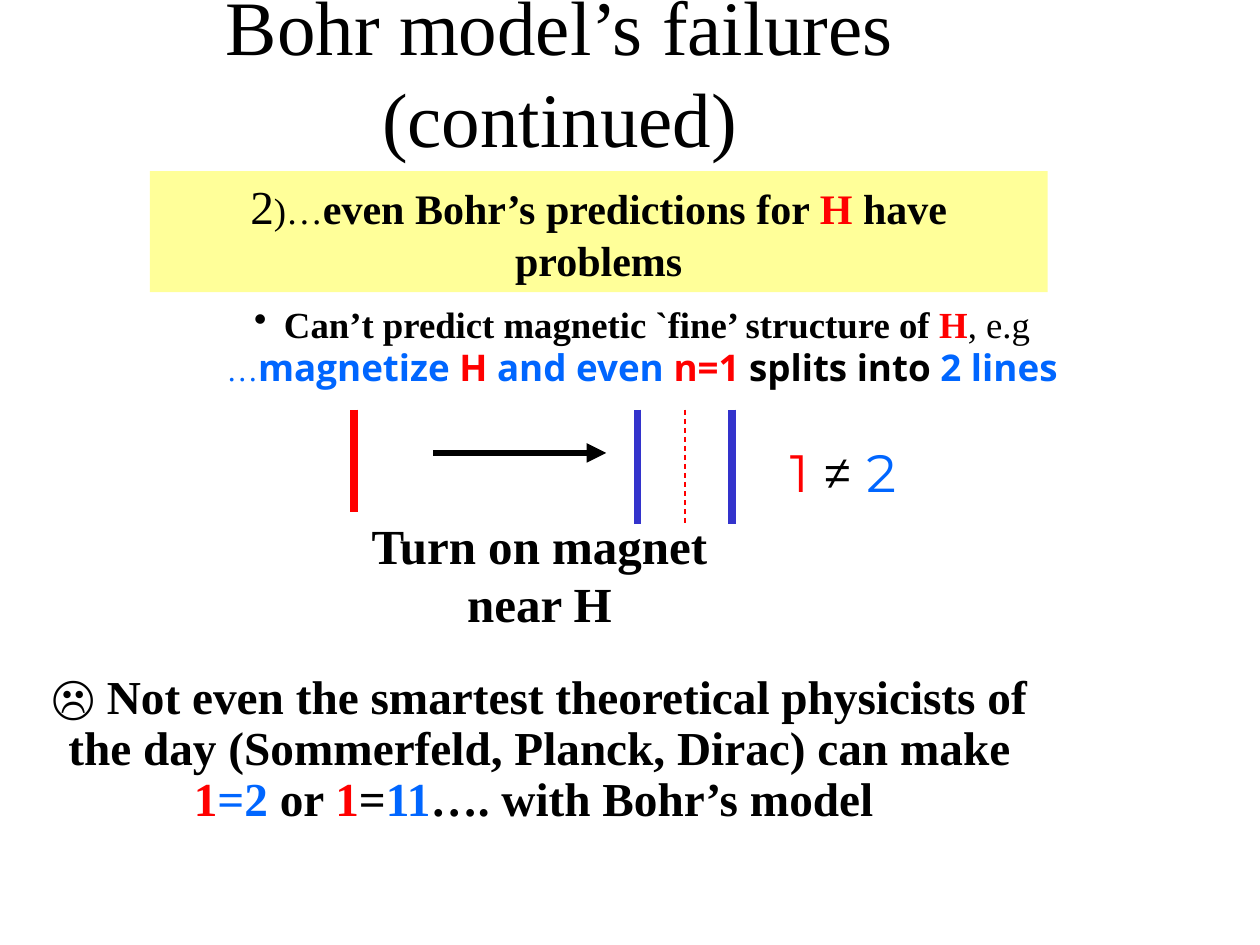
import pptx
import pptx.util
import pptx.dml.color
import pptx.enum.dml
import pptx.enum.shapes
import pptx.enum.text
import pptx.oxml.ns
import lxml.etree

Cm, Pt = pptx.util.Cm, pptx.util.Pt

COLORS = {
    "black": "000000",
    "red": "FF0000",
    "blue": "0066FF",
    "indigo": "3333CC",
    "yellow": "FFFF99",
}
SERIF, SANS, ROUND = "Times New Roman", "Open Sans", "Montserrat"

# Paragraph: shared font settings, then runs of (text, color, own settings).
TITLE = [({"size": 44, "name": SERIF},
          [("Bohr model’s failures (continued)", "black", {})])]

PROBLEM = [({"name": SERIF}, [
    ("2", "black", {"size": 27}),
    (")…", "black", {"size": 21}),
    ("even Bohr’s predictions for ", "black", {"size": 24, "bold": True}),
    ("H", "red", {"size": 24, "bold": True}),
    (" have problems", "black", {"size": 24, "bold": True}),
])]

FINE_STRUCTURE = [
    ({"size": 21, "name": SERIF}, [
        ("Can’t predict magnetic `fine’ structure of ", "black", {"bold": True}),
        ("H", "red", {"bold": True}),
        (", e.g", "black", {}),
    ]),
    ({}, [("…", "blue", {"size": 18, "name": SERIF})] + [
        (text, color, {"size": 21, "name": SANS, "bold": True})
        for text, color in [
            ("magnetize ", "blue"), ("H", "red"), (" and even ", "blue"),
            ("n=1 ", "red"), ("splits into ", "black"), ("2 lines", "blue")]
    ]),
]

MAGNET = [({"size": 28, "name": SERIF, "bold": True},
           [("Turn on magnet near H", "black", {})])]

INEQUALITY = [({"size": 30, "name": ROUND},
               [("1 ", "red", {}), ("≠ ", "black", {}), ("2", "blue", {})])]

VERDICT = [({"size": 27, "name": SERIF, "bold": True}, [
    ("☹ Not even the smartest theoretical physicists of the day "
     "(Sommerfeld, Planck, Dirac) can make ", "black", {}),
    ("1", "red", {}), ("=2", "blue", {}), (" or ", "black", {}),
    ("1", "red", {}), ("=", "black", {}), ("11", "blue", {}),
    ("…. with Bohr’s model ", "black", {}),
])]

# Spectral lines: x, bottom, color, width in points, dashed
LINES_TOP = 8.26
SPLIT_CENTER, SPLIT_GAP, SPLIT_BOTTOM = 13.81, 0.95, 10.57
SPECTRAL_LINES = [
    (7.14, 10.32, "red", 4.5, False),
    (SPLIT_CENTER - SPLIT_GAP, SPLIT_BOTTOM, "indigo", 4, False),
    (SPLIT_CENTER + SPLIT_GAP, SPLIT_BOTTOM, "indigo", 4.25, False),
    (SPLIT_CENTER, SPLIT_BOTTOM, "red", 0.75, True),
]


def rgb(color):
    return pptx.dml.color.RGBColor.from_string(COLORS[color])


def set_font(font, settings):
    for key, value in settings.items():
        setattr(font, key, Pt(value) if key == "size" else value)


def write(shape, paragraphs, line_spacing=1.0,
          anchor=pptx.enum.text.MSO_ANCHOR.TOP):
    frame = shape.text_frame
    frame.word_wrap = True
    frame.auto_size = pptx.enum.text.MSO_AUTO_SIZE.NONE
    frame.vertical_anchor = anchor
    for index, (shared, runs) in enumerate(paragraphs):
        paragraph = frame.add_paragraph() if index else frame.paragraphs[0]
        paragraph.alignment = pptx.enum.text.PP_ALIGN.CENTER
        paragraph.line_spacing = line_spacing
        paragraph.space_before = Pt(2)
        set_font(paragraph.font, shared)
        for text, color, own in runs:
            run = paragraph.add_run()
            run.text = text
            set_font(run.font, own)
            run.font.color.rgb = rgb(color)


def add_text(slide, box, paragraphs, line_spacing=1.0):
    shape = slide.shapes.add_textbox(*map(Cm, box))
    write(shape, paragraphs, line_spacing)
    return shape


def add_bullet(paragraph, indent):
    properties = paragraph._p.get_or_add_pPr()
    properties.set("marL", str(indent))
    properties.set("indent", str(-indent))
    bullet = lxml.etree.SubElement(properties, pptx.oxml.ns.qn("a:buChar"))
    bullet.set("char", "•")
    # The schema wants the bullet ahead of the default run properties.
    defaults = properties.find(pptx.oxml.ns.qn("a:defRPr"))
    if defaults is not None:
        defaults.addprevious(bullet)


def add_line(slide, ends, color, width):
    connector = slide.shapes.add_connector(
        pptx.enum.shapes.MSO_CONNECTOR.STRAIGHT, *map(Cm, ends))
    connector.line.color.rgb = rgb(color)
    connector.line.width = Pt(width)
    lxml.etree.SubElement(connector._element.spPr,
                          pptx.oxml.ns.qn("a:effectLst"))
    return connector


def main():
    deck = pptx.Presentation()
    deck.slide_width, deck.slide_height = Cm(25.4), Cm(19.05)
    slide = deck.slides.add_slide(deck.slide_layouts[5])

    title = slide.shapes.title
    title.left, title.top, title.width, title.height = map(
        Cm, (3.18, 0.23, 16.21, 2.39))
    write(title, TITLE, anchor=pptx.enum.text.MSO_ANCHOR.MIDDLE)

    fine_structure = add_text(slide, (3.66, 6.05, 18.57, 3.2),
                              FINE_STRUCTURE, 0.9)
    add_bullet(fine_structure.text_frame.paragraphs[0], Cm(0.6))

    for x, bottom, color, width, dashed in SPECTRAL_LINES:
        line = add_line(slide, (x, LINES_TOP, x, bottom), color, width)
        if dashed:
            line.line.dash_style = pptx.enum.dml.MSO_LINE.DASH

    arrow = add_line(slide, (8.73, 9.13, 12.22, 9.13), "black", 3.75)
    lxml.etree.SubElement(arrow.line._get_or_add_ln(),
                          pptx.oxml.ns.qn("a:tailEnd"), type="triangle")

    add_text(slide, (6.99, 10.26, 7.77, 2.64), MAGNET)
    add_text(slide, (15.09, 8.74, 3.81, 1.55), INEQUALITY)
    add_text(slide, (0.74, 13.46, 20.27, 4.52), VERDICT, 0.9)

    banner = slide.shapes.add_shape(
        pptx.enum.shapes.MSO_SHAPE.RECTANGLE,
        *map(Cm, (3.02, 3.45, 18.1, 2.44)))
    banner.shadow.inherit = False
    banner.fill.solid()
    banner.fill.fore_color.rgb = rgb("yellow")
    banner.line.fill.background()
    write(banner, PROBLEM)

    deck.save("out.pptx")


if __name__ == "__main__":
    main()
